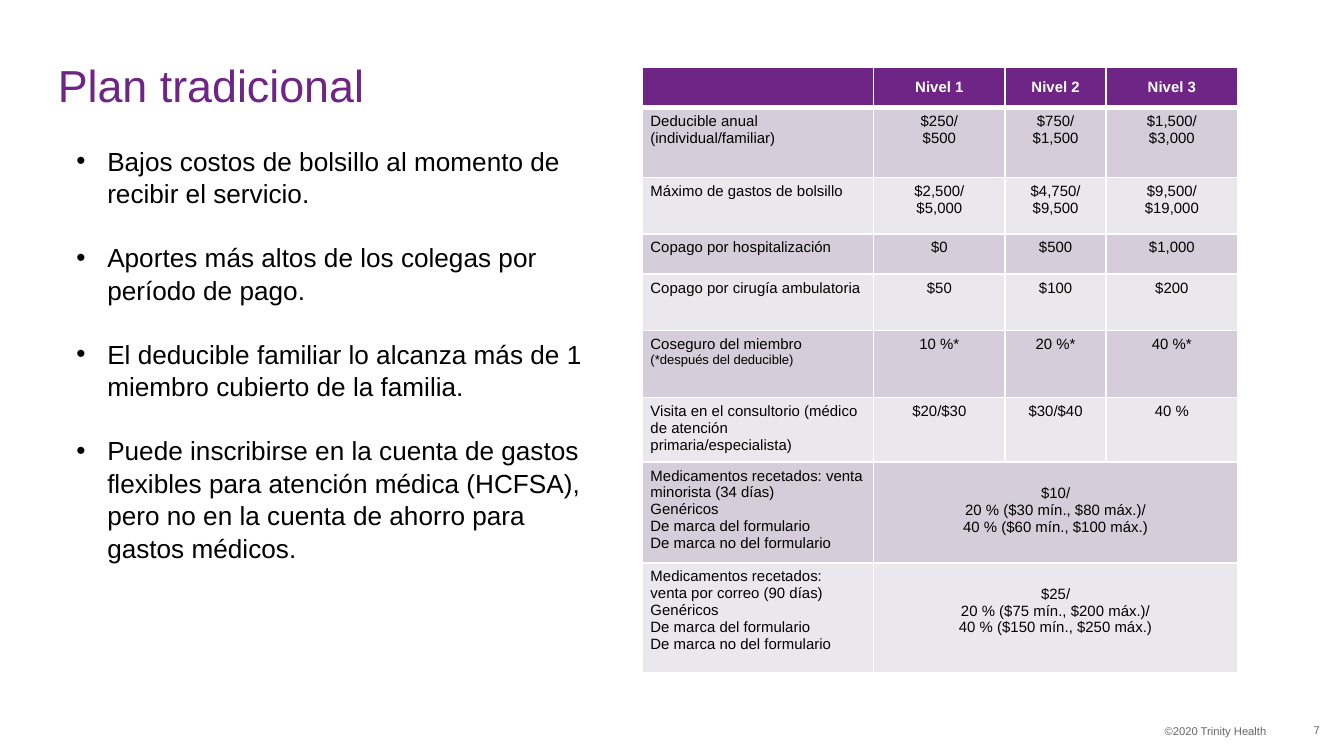
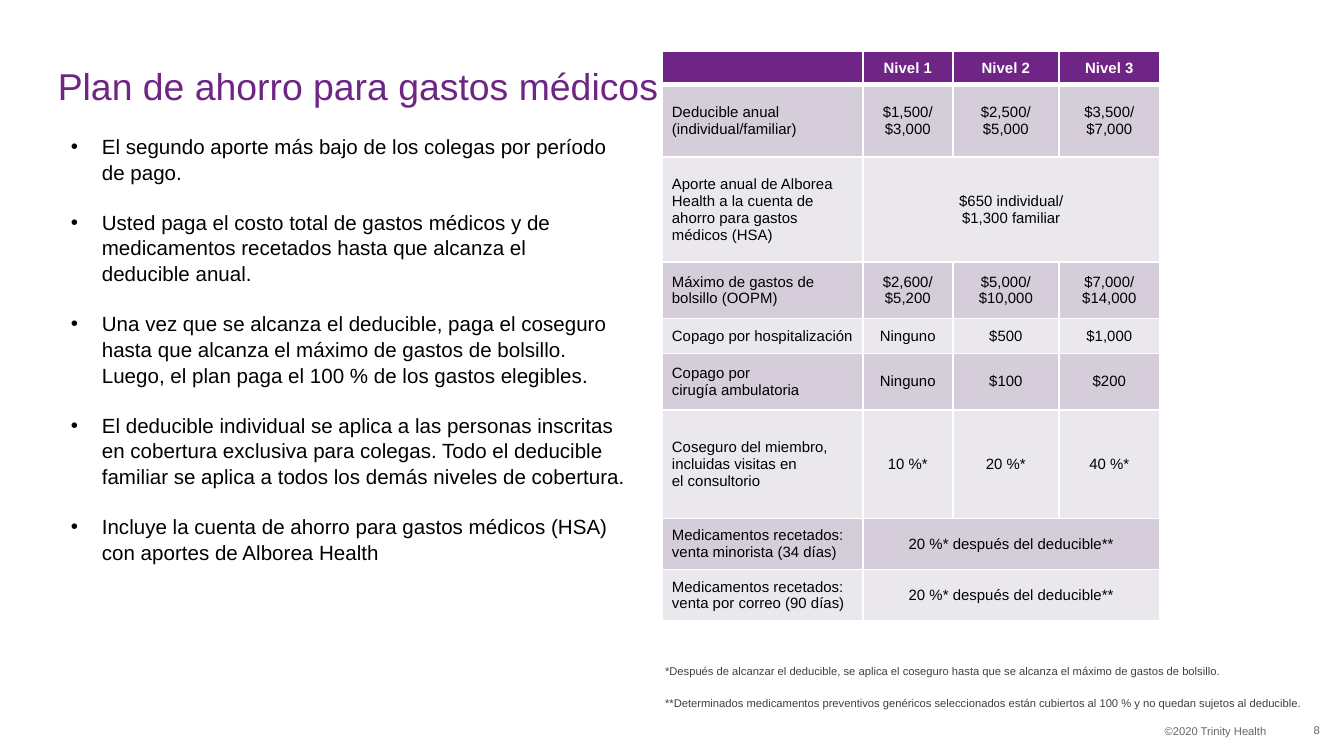
from lxml import etree
from pptx import Presentation
from pptx import util as u
from pptx.dml.color import RGBColor
from pptx.enum import text as t
from pptx.oxml.ns import qn

# Shared look: lengths are in columns and rows of a square grid, 100 columns wide
COLS, ROWS = 100, 56.25
UNIT = u.Inches(10) / COLS
FONT = "Arial"
COLORS = {
    "purple": "6E2585",
    "band_dark": "D5CDD9",
    "band_light": "EBE8ED",
    "white": "FFFFFF",
    "black": "000000",
    "footer": "666666",
    "footnote": "443D3E",
}
COPYRIGHT = "©2020 Trinity Health"
TITLE_AREA = (4.3, 3.8, 90, 5.5)
COPYRIGHT_AREA = (53.3, 53.4, 41.9, 2)
NUMBER_AREA = (93.8, 52.8, 4.4, 3)
LEFT, CENTER, RIGHT = t.PP_ALIGN.LEFT, t.PP_ALIGN.CENTER, t.PP_ALIGN.RIGHT
TOP, MIDDLE = t.MSO_ANCHOR.TOP, t.MSO_ANCHOR.MIDDLE
LEVELS = ["", "Nivel 1", "Nivel 2", "Nivel 3"]

# Content: a list in a cell holds paragraphs, a row of two cells spans the levels
TRADITIONAL = {
    "title": "Plan tradicional",
    "title_size": 24,
    "number": "7",
    "bullet_area": (4.7, 10.2, 40.7, 31.6),
    "bullet_size": 14,
    "bullets": [
        "Bajos costos de bolsillo al momento de recibir el servicio.",
        "Aportes más altos de los colegas por período de pago.",
        "El deducible familiar lo alcanza más de 1 miembro cubierto de la familia.",
        "Puede inscribirse en la cuenta de gastos flexibles para atención médica "
        "(HCFSA), pero no en la cuenta de ahorro para gastos médicos.",
    ],
    "table_corner": (47.8, 5),
    "widths": [17.2, 9.8, 7.5, 9.8],
    "heights": [3, 5.2, 4.2, 3, 4.2, 5, 4.2, 7.5, 8.2],
    "side_margin": 0.6,
    "anchor": TOP,
    "span_top": 1.7,
    "rows": [
        LEVELS,
        ["Deducible anual (individual/familiar)", ["$250/", "$500"],
         ["$750/", "$1,500"], "$1,500/\n$3,000"],
        ["Máximo de gastos de bolsillo", "$2,500/\n$5,000", "$4,750/\n$9,500",
         "$9,500/\n$19,000"],
        ["Copago por hospitalización", "$0", "$500", "$1,000"],
        ["Copago por cirugía ambulatoria", "$50", "$100", "$200"],
        [["Coseguro del miembro", "(*después del deducible)"],
         "10 %*", "20 %*", "40 %*"],
        ["Visita en el consultorio (médico de atención primaria/especialista)",
         "$20/$30", "$30/$40", "40 %"],
        [["Medicamentos recetados: venta minorista (34 días)", "Genéricos",
          "De marca del formulario", "De marca no del formulario"],
         ["$10/", "20 % ($30 mín., $80 máx.)/", "40 % ($60 mín., $100 máx.)"]],
        [["Medicamentos recetados:\nventa por correo (90 días)", "Genéricos",
          "De marca del formulario", "De marca no del formulario"],
         ["$25/", "20 % ($75 mín., $200 máx.)/", "40 % ($150 mín., $250 máx.)"]],
    ],
    "footnotes": [],
}
SAVINGS = {
    "title": "Plan de ahorro para gastos médicos",
    "title_size": 20,
    "number": "8",
    "bullet_area": (4.3, 9.4, 43.3, 32.5),
    "bullet_size": 11,
    "bullets": [
        "El segundo aporte más bajo de los colegas por período de pago.",
        "Usted paga el costo total de gastos médicos y de medicamentos recetados "
        "hasta que alcanza el\ndeducible anual.",
        "Una vez que se alcanza el deducible, paga el coseguro hasta que alcanza el "
        "máximo de gastos de bolsillo. Luego, el plan paga el 100 % de los gastos "
        "elegibles.",
        "El deducible individual se aplica a las personas inscritas en cobertura "
        "exclusiva para colegas. Todo el deducible familiar se aplica a todos los "
        "demás niveles de cobertura.",
        "Incluye la cuenta de ahorro para gastos médicos (HSA) con aportes de "
        "Alborea Health",
    ],
    "table_corner": (49.3, 3.8),
    "widths": [14.9, 6.7, 7.9, 7.5],
    "heights": [2.5, 5.4, 7.8, 4.2, 2.6, 4.2, 8.1, 3.8, 3.8],
    "side_margin": 0.7,
    "anchor": MIDDLE,
    "span_top": 0.4,
    "rows": [
        LEVELS,
        ["Deducible anual (individual/familiar)", ["$1,500/", "$3,000"],
         ["$2,500/", "$5,000"], "$3,500/\n$7,000"],
        ["Aporte anual de Alborea Health a la cuenta de ahorro para gastos "
         "médicos (HSA)", ["$650 individual/", "$1,300 familiar"]],
        ["Máximo de gastos de bolsillo (OOPM)", "$2,600/\n$5,200",
         "$5,000/\n$10,000", "$7,000/\n$14,000"],
        ["Copago por hospitalización", "Ninguno", "$500", "$1,000"],
        ["Copago por\ncirugía ambulatoria", "Ninguno", "$100", "$200"],
        ["Coseguro del miembro, incluidas visitas en\nel consultorio",
         "10 %*", "20 %*", "40 %*"],
        ["Medicamentos recetados: venta minorista (34 días)",
         "20 %* después del deducible**"],
        ["Medicamentos recetados: venta por correo (90 días)",
         "20 %* después del deducible**"],
    ],
    "footnotes": [
        ((48.5, 47, 46.7, 3.4),
         "*Después de alcanzar el deducible, se aplica el coseguro hasta que se "
         "alcanza el máximo de gastos de bolsillo."),
        ((48.5, 49.4, 50.1, 3.4),
         "**Determinados medicamentos preventivos genéricos seleccionados están "
         "cubiertos al 100 % y no quedan sujetos al deducible."),
    ],
}


def grid(count):
    return u.Emu(round(count * UNIT))


def rgb(name):
    return RGBColor.from_string(COLORS[name])


def apply(target, values):
    for key, value in values.items():
        setattr(target, key, value)


def write(paragraph, words, size, color, bold=False, **layout):
    """Fill one paragraph; a newline becomes a line break of the same size."""
    paragraph.text = words
    apply(paragraph, layout)
    for run in paragraph.runs:
        apply(run.font, {"name": FONT, "size": u.Pt(size), "bold": bold})
        run.font.color.rgb = rgb(color)
    for line_break in paragraph._p.findall(qn("a:br")):
        etree.SubElement(line_break, qn("a:rPr"), sz=str(size * 100))
    if not words:
        etree.SubElement(paragraph._p, qn("a:endParaRPr"), sz=str(size * 100))


def paragraphs(frame, items):
    """Yield a paragraph of the frame for each item, starting with the first."""
    for i, item in enumerate(items):
        yield (frame.add_paragraph() if i else frame.paragraphs[0]), item


def add_text(slide, area, **frame_format):
    frame = slide.shapes.add_textbox(*map(grid, area)).text_frame
    apply(frame, {"word_wrap": True, **frame_format})
    return frame


def add_title(slide, words, size):
    title = slide.shapes.title
    apply(title, dict(zip(("left", "top", "width", "height"), map(grid, TITLE_AREA))))
    margins = dict.fromkeys(
        ("margin_left", "margin_top", "margin_right", "margin_bottom"), 0)
    apply(title.text_frame, {"vertical_anchor": MIDDLE, "word_wrap": True,
                             "auto_size": t.MSO_AUTO_SIZE.NONE, **margins})
    write(title.text_frame.paragraphs[0], words, size, "purple",
          alignment=LEFT, line_spacing=0.9)


def add_footer(slide, number):
    number_frame = add_text(slide, NUMBER_AREA, vertical_anchor=MIDDLE, margin_right=0)
    copyright_frame = add_text(slide, COPYRIGHT_AREA)
    for frame, words in ((number_frame, number), (copyright_frame, COPYRIGHT)):
        write(frame.paragraphs[0], words, 6, "footer", alignment=RIGHT)


def add_bullets(slide, area, points, size):
    indent = grid(2.3)
    for paragraph, point in paragraphs(add_text(slide, area), points):
        props = paragraph._p.get_or_add_pPr()
        props.set("marL", str(indent))
        props.set("indent", str(-indent))
        etree.SubElement(props, qn("a:buFont"), typeface=FONT)
        etree.SubElement(props, qn("a:buChar"), char="•")
        gap = 0 if point == points[-1] else 1.2 * size
        write(paragraph, point, size, "black", line_spacing=1.04,
              space_after=u.Pt(gap))


def add_borders(cell, bottom):
    props = cell._tc.get_or_add_tcPr()
    for side, points in (("L", 1), ("R", 1), ("T", 1), ("B", bottom)):
        line = etree.SubElement(props, qn("a:ln" + side), w=str(u.Pt(points)))
        fill = etree.SubElement(line, qn("a:solidFill"))
        etree.SubElement(fill, qn("a:srgbClr"), val=COLORS["white"])


def format_cell(cell, header, band, plan, top):
    add_borders(cell, 3 if header else 1)
    cell.fill.solid()
    cell.fill.fore_color.rgb = rgb(band)
    side = grid(plan["side_margin"])
    apply(cell, {"margin_left": side, "margin_right": side,
                 "margin_top": grid(top), "margin_bottom": grid(0.4),
                 "vertical_anchor": MIDDLE if header else plan["anchor"]})


def add_benefits(slide, plan):
    rows, widths, heights = plan["rows"], plan["widths"], plan["heights"]
    table = slide.shapes.add_table(
        len(rows), len(widths), *map(grid, plan["table_corner"]),
        grid(sum(widths)), grid(sum(heights))).table
    table.horz_banding = False
    for column, width in zip(table.columns, widths):
        column.width = grid(width)
    for r, (values, height) in enumerate(zip(rows, heights)):
        table.rows[r].height = grid(height)
        header = r == 0
        band = "purple" if header else "band_dark" if r % 2 else "band_light"
        spanned = len(values) == 2
        for c in range(len(widths)):
            top = plan["span_top"] if spanned and c else 0.4
            format_cell(table.cell(r, c), header, band, plan, top)
        if spanned:
            table.cell(r, 1).merge(table.cell(r, len(widths) - 1))
        for c, value in enumerate(values):
            items = value if isinstance(value, list) else [value]
            for paragraph, words in paragraphs(table.cell(r, c).text_frame, items):
                write(paragraph, words, 7 if words.startswith("(*") else 8,
                      "white" if header else "black", bold=header,
                      alignment=CENTER if c else LEFT)


def add_footnote(slide, area, words):
    write(add_text(slide, area).paragraphs[0], words, 6, "footnote",
          line_spacing=u.Pt(21), space_after=u.Pt(6))


def add_plan(deck, plan):
    slide = deck.slides.add_slide(deck.slide_layouts[5])
    add_title(slide, plan["title"], plan["title_size"])
    add_bullets(slide, plan["bullet_area"], plan["bullets"], plan["bullet_size"])
    add_benefits(slide, plan)
    for area, words in plan["footnotes"]:
        add_footnote(slide, area, words)
    add_footer(slide, plan["number"])


def main():
    deck = Presentation()
    deck.slide_width, deck.slide_height = grid(COLS), grid(ROWS)
    for plan in (TRADITIONAL, SAVINGS):
        add_plan(deck, plan)
    deck.save("out.pptx")


if __name__ == "__main__":
    main()
